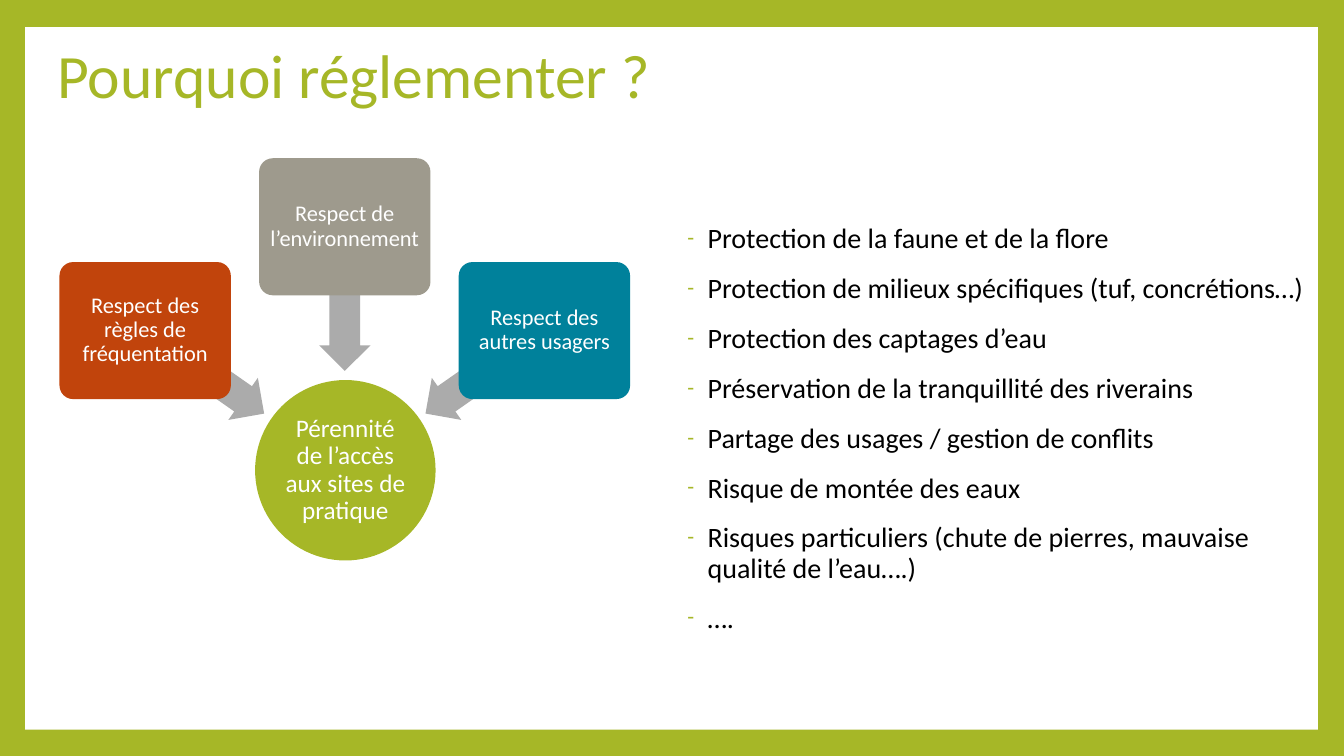
from dataclasses import dataclass

from lxml import etree
from pptx import Presentation
from pptx.dml.color import RGBColor
from pptx.enum.shapes import MSO_SHAPE as Shape
from pptx.enum.text import MSO_ANCHOR as Anchor, PP_ALIGN as Align
from pptx.oxml.ns import qn
from pptx.util import Inches, Pt


@dataclass(frozen=True)
class Theme:
    font: str = "Calibri"
    green: str = "A6B727"
    white: str = "FFFFFF"
    black: str = "000000"
    orange: str = "C1440C"
    taupe: str = "9E9A8D"
    teal: str = "00819B"
    arrow: str = "ABABAB"
    title: int = 44
    body: int = 20
    goal: int = 18
    reason: int = 16


THEME = Theme()
CENTER_X = 3.42  # vertical axis of the diagram
BOX_W, BOX_H, BOX_STEP = 1.7, 1.36, 1.98
ARROW_W, ARROW_H, ARROW_STEP = 1.44, 0.51, 1.39

# Label, colour, column, box top, arrow centre, arrow rotation
REASONS = [
    ("Respect des règles de fréquentation", THEME.orange, -1, 2.6, 3.69, 215),
    ("Respect de l’environnement", THEME.taupe, 0, 1.57, 2.96, 270),
    ("Respect des autres usagers", THEME.teal, 1, 2.6, 3.69, 325),
]
POINTS = [
    "Protection de la faune et de la flore",
    "Protection de milieux spécifiques (tuf, concrétions…)",
    "Protection des captages d’eau",
    "Préservation de la tranquillité des riverains",
    "Partage des usages / gestion de conflits",
    "Risque de montée des eaux",
    "Risques particuliers (chute de pierres, mauvaise qualité de l’eau….)",
    "….",
]


def rgb(color):
    return RGBColor.from_string(color)


def style_paragraph(p, size, color, align=Align.LEFT):
    p.alignment = align
    p.line_spacing = 0.9
    for r in p.runs:
        r.font.name = THEME.font
        r.font.size = Pt(size)
        r.font.color.rgb = rgb(color)


def add_filled(s, kind, x, y, w, h, color):
    sp = s.shapes.add_shape(kind, Inches(x), Inches(y), Inches(w), Inches(h))
    sp.shadow.inherit = False
    sp.fill.solid()
    sp.fill.fore_color.rgb = rgb(color)
    sp.line.fill.background()
    return sp


def add_label(sp, text, size, inset):
    tf = sp.text_frame
    tf.text = text
    tf.word_wrap = True
    tf.vertical_anchor = Anchor.MIDDLE
    tf.margin_left = tf.margin_right = Inches(inset)
    tf.margin_top = tf.margin_bottom = Inches(inset)
    style_paragraph(tf.paragraphs[0], size, THEME.white, Align.CENTER)


def add_text(s, x, y, w, h, lines, size, color):
    tb = s.shapes.add_textbox(Inches(x), Inches(y), Inches(w), Inches(h))
    tf = tb.text_frame
    tf.word_wrap = True
    tf.text = "\n".join(lines)
    for p in tf.paragraphs:
        style_paragraph(p, size, color)
    return tf


def add_dash(p):
    p.space_before = Pt(14)
    pPr = p._p.get_or_add_pPr()
    pPr.set("marL", str(Inches(0.25)))
    pPr.set("indent", str(Inches(-0.2)))
    color = etree.SubElement(pPr, qn("a:buClr"))
    etree.SubElement(color, qn("a:srgbClr"), val=THEME.green)
    etree.SubElement(pPr, qn("a:buSzPct"), val="80000")
    etree.SubElement(pPr, qn("a:buFont"), typeface=THEME.font)
    etree.SubElement(pPr, qn("a:buChar"), char="-")


def add_reason(s, label, color, column, top, arrow_y, rotation):
    arrow_x = CENTER_X + column * ARROW_STEP
    arrow = add_filled(s, Shape.LEFT_ARROW, arrow_x - ARROW_W / 2,
                       arrow_y - ARROW_H / 2, ARROW_W, ARROW_H, THEME.arrow)
    arrow.adjustments[0] = 0.6
    arrow.rotation = rotation
    left = CENTER_X + column * BOX_STEP - BOX_W / 2
    box = add_filled(s, Shape.ROUNDED_RECTANGLE, left, top, BOX_W, BOX_H, color)
    box.adjustments[0] = 0.1
    add_label(box, label, THEME.reason, 0.03)


def main():
    prs = Presentation()
    prs.slide_width, prs.slide_height = Inches(13.33), Inches(7.5)
    s = prs.slides.add_slide(prs.slide_layouts[6])

    # Green frame around a white panel
    s.background.fill.solid()
    s.background.fill.fore_color.rgb = rgb(THEME.green)
    add_filled(s, Shape.RECTANGLE, 0.25, 0.27, 12.82, 6.97, THEME.white)

    # Diagram: three reasons leading to one goal
    goal = add_filled(s, Shape.OVAL, CENTER_X - 0.89, 3.77, 1.79, 1.79, THEME.green)
    add_label(goal, "Pérennité de l’accès aux sites de pratique", THEME.goal, 0.01)
    for reason in REASONS:
        add_reason(s, *reason)

    # Title and list
    add_text(s, 0.47, 0.4, 12.44, 0.78, ["Pourquoi réglementer ?"],
             THEME.title, THEME.green)
    tf = add_text(s, 6.67, 2.18, 6.57, 4.33, POINTS, THEME.body, THEME.black)
    for p in tf.paragraphs:
        add_dash(p)

    prs.save("out.pptx")


if __name__ == "__main__":
    main()
